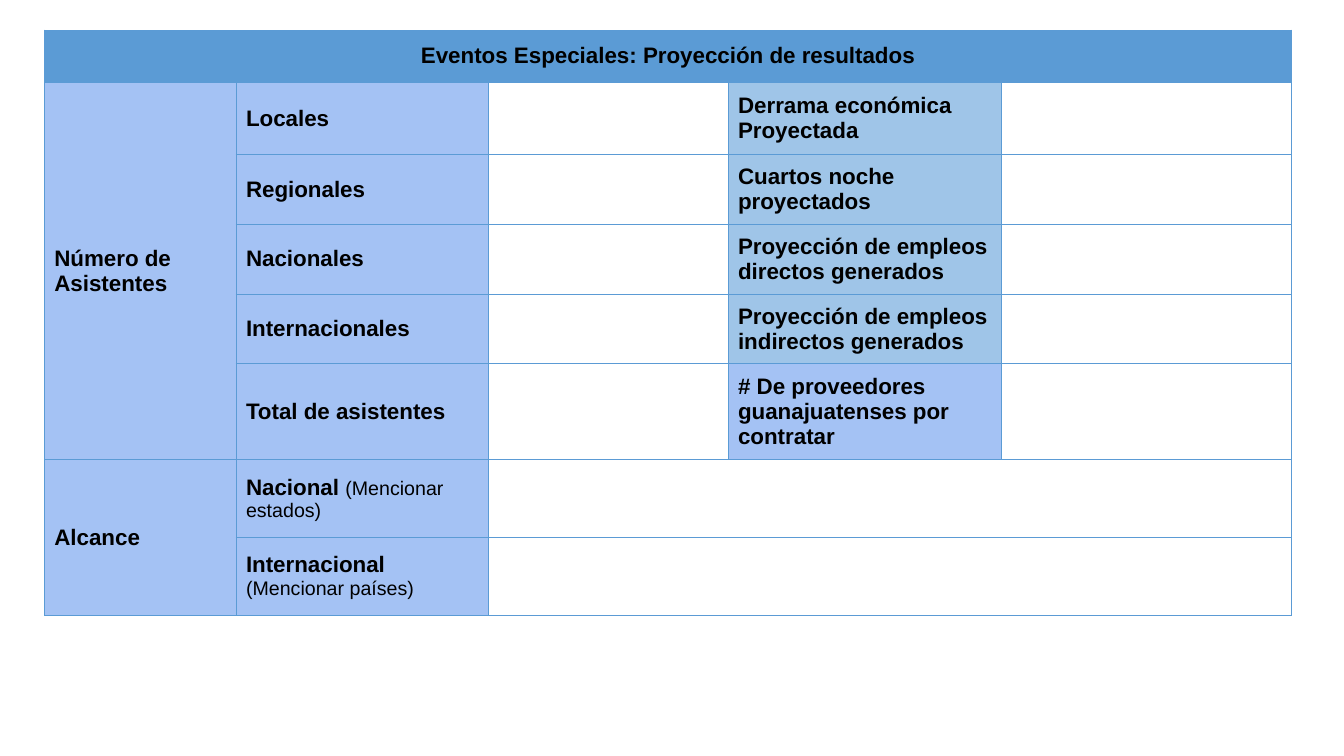
import dataclasses

import lxml.etree
import pptx
import pptx.dml.color
import pptx.enum.text
import pptx.oxml.ns
import pptx.table
import pptx.util

FONT = "Arial"
HEADER_BLUE = "5B9BD5"
LABEL_BLUE = "A4C2F4"
RESULT_BLUE = "9FC5E8"
BLACK = "000000"
MARGIN = pptx.util.Cm(0.25)

COLUMN_WIDTHS = (4.83, 6.35, 6.05, 6.88, 7.32)
ROW_HEIGHTS = (1.31, 1.82, 1.76, 1.76, 1.76, 2.41, 1.96, 1.96)


@dataclasses.dataclass(frozen=True)
class Label:
    """A filled cell: its place, wording, optional light note and span."""
    row: int
    column: int
    text: str
    note: str = ""
    fill: str = LABEL_BLUE
    rows: int = 1
    columns: int = 1
    centred: bool = False


ATTENDEES = ("Locales", "Regionales", "Nacionales", "Internacionales", "Total de asistentes")
RESULTS = (
    "Derrama económica\nProyectada",
    "Cuartos noche\nproyectados",
    "Proyección de empleos directos generados",
    "Proyección de empleos indirectos generados",
)
LABELS = (
    Label(0, 0, "Eventos Especiales: Proyección de resultados",
          fill=HEADER_BLUE, columns=5, centred=True),
    Label(1, 0, "Número de Asistentes", rows=5),
    *(Label(row, 1, text) for row, text in enumerate(ATTENDEES, 1)),
    *(Label(row, 3, text, fill=RESULT_BLUE) for row, text in enumerate(RESULTS, 1)),
    Label(5, 3, "# De proveedores guanajuatenses por contratar"),
    Label(6, 0, "Alcance", rows=2),
    Label(6, 1, "Nacional ", "(Mencionar estados)"),
    Label(7, 1, "Internacional ", "(Mencionar países)"),
)


def colour(value: str) -> pptx.dml.color.RGBColor:
    return pptx.dml.color.RGBColor.from_string(value)


def add_borders(cell: pptx.table._Cell) -> None:
    properties = cell._tc.get_or_add_tcPr()
    for side in ("a:lnL", "a:lnR", "a:lnT", "a:lnB"):
        line = lxml.etree.SubElement(properties, pptx.oxml.ns.qn(side),
                                     w=str(pptx.util.Pt(0.75)))
        fill = lxml.etree.SubElement(line, pptx.oxml.ns.qn("a:solidFill"))
        lxml.etree.SubElement(fill, pptx.oxml.ns.qn("a:srgbClr"), val=HEADER_BLUE)


def merge(table: pptx.table.Table, row: int, column: int, rows: int, columns: int) -> None:
    """Join a block of cells, given its top-left cell and its size."""
    table.cell(row, column).merge(table.cell(row + rows - 1, column + columns - 1))


def fill_label(table: pptx.table.Table, label: Label) -> None:
    if label.rows * label.columns > 1:
        merge(table, label.row, label.column, label.rows, label.columns)
    cell = table.cell(label.row, label.column)
    cell.fill.solid()
    cell.fill.fore_color.rgb = colour(label.fill)
    cell.vertical_anchor = pptx.enum.text.MSO_ANCHOR.MIDDLE
    cell.margin_left = cell.margin_right = MARGIN
    cell.margin_top = cell.margin_bottom = MARGIN
    cell.text_frame.text = label.text
    if label.note:
        cell.text_frame.paragraphs[0].add_run().text = label.note
    for para in cell.text_frame.paragraphs:
        if label.centred:
            para.alignment = pptx.enum.text.PP_ALIGN.CENTER
        for index, span in enumerate(para.runs):
            span.font.name = FONT
            span.font.size = pptx.util.Pt(14 if index else 16)
            span.font.bold = index == 0
            span.font.color.rgb = colour(BLACK)


def add_projection_table(page: pptx.slide.Slide) -> None:
    frame = page.shapes.add_table(
        len(ROW_HEIGHTS), len(COLUMN_WIDTHS), pptx.util.Cm(1.12), pptx.util.Cm(0.76),
        pptx.util.Cm(sum(COLUMN_WIDTHS)), pptx.util.Cm(sum(ROW_HEIGHTS)))
    table = frame.table
    table.first_row = table.horz_banding = False
    for column, width in zip(table.columns, COLUMN_WIDTHS):
        column.width = pptx.util.Cm(width)
    for row, height in zip(table.rows, ROW_HEIGHTS):
        row.height = pptx.util.Cm(height)
    for cell in table.iter_cells():
        add_borders(cell)
        cell.fill.background()
    for label in LABELS:
        fill_label(table, label)
    for row in (6, 7):
        merge(table, row, 2, 1, 3)


def main() -> None:
    deck = pptx.Presentation()
    deck.slide_width = pptx.util.Cm(33.87)
    deck.slide_height = pptx.util.Cm(19.05)
    page = deck.slides.add_slide(deck.slide_layouts[6])
    add_projection_table(page)
    deck.save("out.pptx")


if __name__ == "__main__":
    main()
